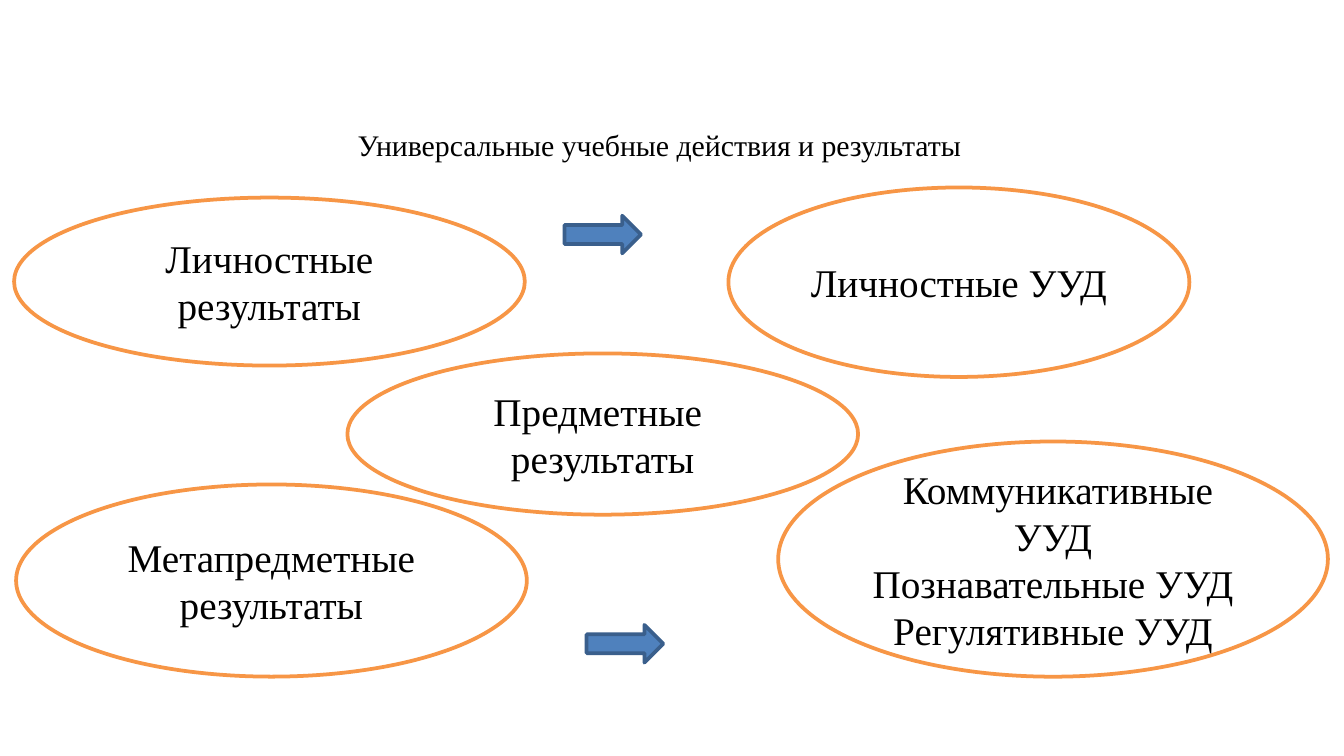
from pptx import Presentation
from pptx import util as u
from pptx.dml.color import RGBColor
from pptx.enum import shapes, text

PX = u.Inches(1) // 200
FONT = "Times New Roman"
BLACK = RGBColor(0x00, 0x00, 0x00)
WHITE = RGBColor(0xFF, 0xFF, 0xFF)
ORANGE = RGBColor(0xF7, 0x96, 0x46)
BLUE = RGBColor(0x4F, 0x81, 0xBD)
NAVY = RGBColor(0x3A, 0x5F, 0x8C)

ARROW = shapes.MSO_SHAPE.RIGHT_ARROW
OVAL = shapes.MSO_SHAPE.OVAL

PARTS = [
    (ARROW, (840, 321, 114, 56), ""),
    (OVAL, (1084, 279, 686, 282), "Личностные УУД"),
    (OVAL, (21, 294, 760, 250), "Личностные результаты"),
    (OVAL, (517, 526, 760, 240), "Предметные  результаты"),
    (ARROW, (873, 930, 114, 56), ""),
    (OVAL, (1158, 657, 818, 350),
     " Коммуникативные УУД\nПознавательные УУД\nРегулятивные УУД"),
    (OVAL, (24, 721, 760, 286), "Метапредметные результаты"),
]


def scale(box):
    return [n * PX for n in box]


def write(shape, words, size):
    frame = shape.text_frame
    frame.text = words
    frame.word_wrap = True
    frame.auto_size = text.MSO_AUTO_SIZE.NONE
    frame.vertical_anchor = text.MSO_ANCHOR.MIDDLE
    for para in frame.paragraphs:
        para.alignment = text.PP_ALIGN.CENTER
        for run in para.runs:
            run.font.name = FONT
            run.font.size = u.Pt(size)
            run.font.color.rgb = BLACK


def add_title(slide, box, words):
    title = slide.shapes.title
    title.left, title.top, title.width, title.height = scale(box)
    write(title, words, 16)


def add_form(slide, kind, box, fill, line):
    form = slide.shapes.add_shape(kind, *scale(box))
    form.shadow.inherit = False
    form.fill.solid()
    form.fill.fore_color.rgb = fill
    form.line.color.rgb = line
    form.line.width = u.Pt(2)
    return form


def add_oval(slide, box, words):
    oval = add_form(slide, OVAL, box, WHITE, ORANGE)
    frame = oval.text_frame
    frame.margin_left = frame.margin_right = 14 * PX
    frame.margin_top = frame.margin_bottom = 8 * PX
    write(oval, words, 21)


def add_arrow(slide, box):
    add_form(slide, ARROW, box, BLUE, NAVY)


def main():
    deck = Presentation()
    deck.slide_width, deck.slide_height = scale((2000, 1125))
    slide = deck.slides.add_slide(deck.slide_layouts[5])
    add_title(slide, (125, 122, 1724, 186),
              "Универсальные учебные действия и результаты ")
    for kind, box, words in PARTS:
        if kind == OVAL:
            add_oval(slide, box, words)
        else:
            add_arrow(slide, box)
    deck.save("out.pptx")


if __name__ == "__main__":
    main()
